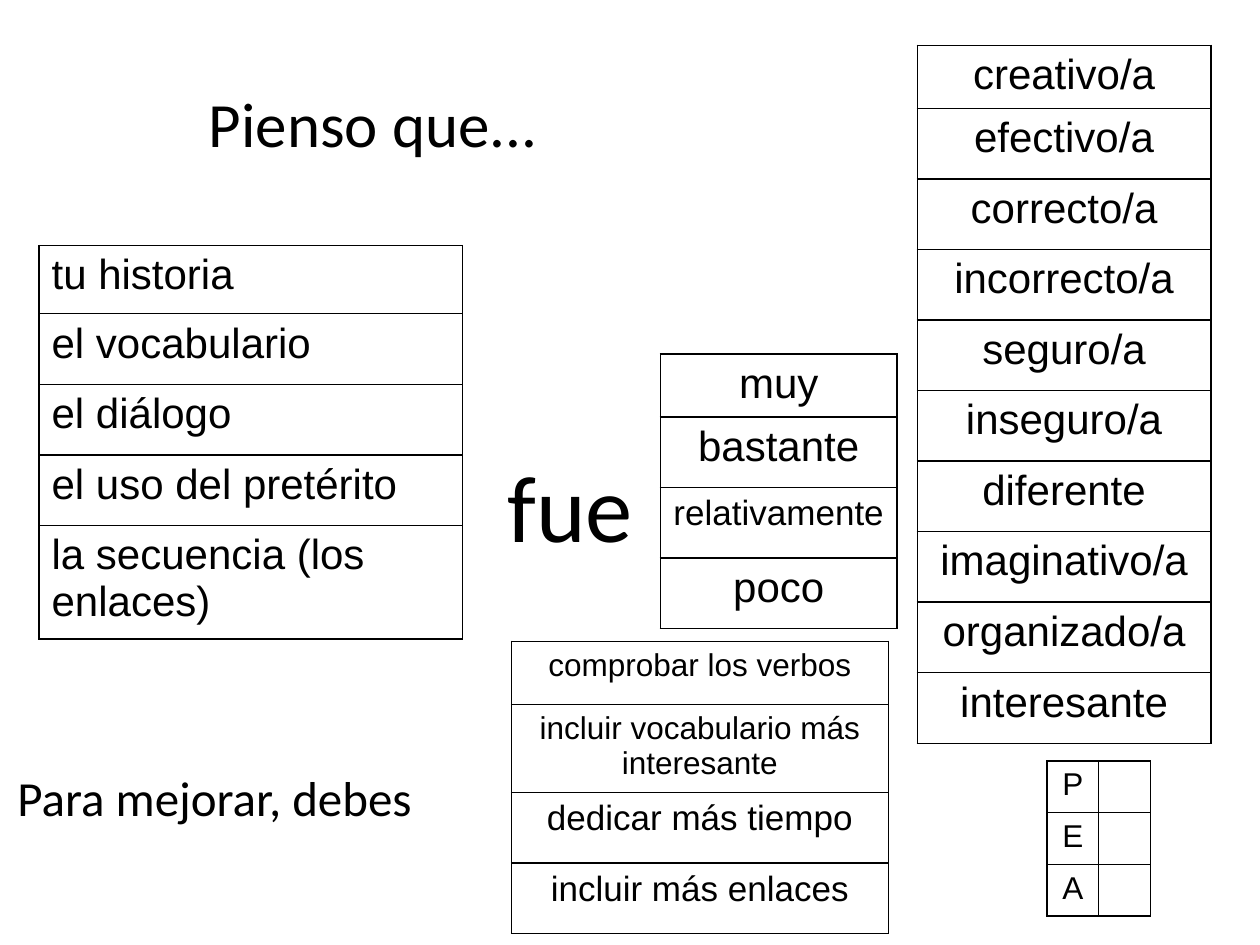
from lxml import etree
from pptx import Presentation
from pptx.dml.color import RGBColor
from pptx.enum.text import PP_ALIGN
from pptx.oxml.ns import qn
from pptx.util import Inches, Pt

BLACK = RGBColor(0x00, 0x00, 0x00)
LEFT, CENTER = PP_ALIGN.LEFT, PP_ALIGN.CENTER


def format_paragraph(paragraph, font_name, size, alignment):
    paragraph.alignment = alignment
    for run in paragraph.runs:
        run.font.name = font_name
        run.font.size = Pt(size)
        run.font.color.rgb = BLACK


def add_borders(cell):
    properties = cell._tc.get_or_add_tcPr()
    for side in ("a:lnL", "a:lnR", "a:lnT", "a:lnB"):
        line = etree.SubElement(properties, qn(side), w=str(Pt(1)))
        fill = etree.SubElement(line, qn("a:solidFill"))
        etree.SubElement(fill, qn("a:srgbClr"), val=str(BLACK))


presentation = Presentation()
presentation.slide_width = Inches(10)
presentation.slide_height = Inches(7.5)
slide = presentation.slides.add_slide(presentation.slide_layouts[6])

# Sentence starters: text, left, top, width, height, size, alignment
starters = [
    ("Pienso que...", 1.56, 0.62, 7.03, 0.71, 36, LEFT),
    ("fue", 3.43, 3.51, 2.19, 1.01, 54, CENTER),
    ("Para mejorar, debes", 0.04, 6.04, 9.49, 0.57, 28, LEFT),
]
for text, left, top, width, height, size, alignment in starters:
    text_box = slide.shapes.add_textbox(
        Inches(left), Inches(top), Inches(width), Inches(height))
    text_frame = text_box.text_frame
    text_frame.word_wrap = True
    text_frame.text = text
    format_paragraph(text_frame.paragraphs[0], "Calibri", size, alignment)

topics = ["tu historia", "el vocabulario", "el diálogo",
          "el uso del pretérito", "la secuencia (los enlaces)"]
adjectives = ["creativo/a", "efectivo/a", "correcto/a", "incorrecto/a",
              "seguro/a", "inseguro/a", "diferente", "imaginativo/a",
              "organizado/a", "interesante"]
intensifiers = ["muy", "bastante", "relativamente", "poco"]
improvements = ["comprobar los verbos", "incluir vocabulario más interesante",
                "dedicar más tiempo", "incluir más enlaces"]
checklist = ["P", "E", "A"]

# Word banks: words, sizes, left, top, column widths, first row height,
# other row height, alignment
word_banks = [
    (topics, [24] * 5, 0.31, 1.95, [3.36], 0.54, 0.56, LEFT),
    (adjectives, [24] * 10, 7.28, 0.36, [2.33], 0.5, 0.56, CENTER),
    (intensifiers, [24, 24, 20, 24], 5.24, 2.81, [1.88], 0.5, 0.56, CENTER),
    (improvements, [18, 18, 20, 20], 4.06, 5.09, [2.99], 0.5, 0.56, CENTER),
    (checklist, [18] * 3, 8.31, 6.04, [0.41, 0.41], 0.41, 0.41, CENTER),
]
for words, sizes, left, top, widths, first_height, row_height, alignment in word_banks:
    heights = [first_height] + [row_height] * (len(words) - 1)
    table = slide.shapes.add_table(
        len(words), len(widths), Inches(left), Inches(top),
        Inches(sum(widths)), Inches(sum(heights))).table
    table.first_row = False
    table.horz_banding = False
    for column, width in zip(table.columns, widths):
        column.width = Inches(width)
    for row, height, word, size in zip(table.rows, heights, words, sizes):
        row.height = Inches(height)
        for cell in row.cells:
            add_borders(cell)
            cell.fill.background()
        word_cell = row.cells[0]
        word_cell.text_frame.text = word
        format_paragraph(word_cell.text_frame.paragraphs[0], "Arial", size, alignment)

presentation.save("out.pptx")
